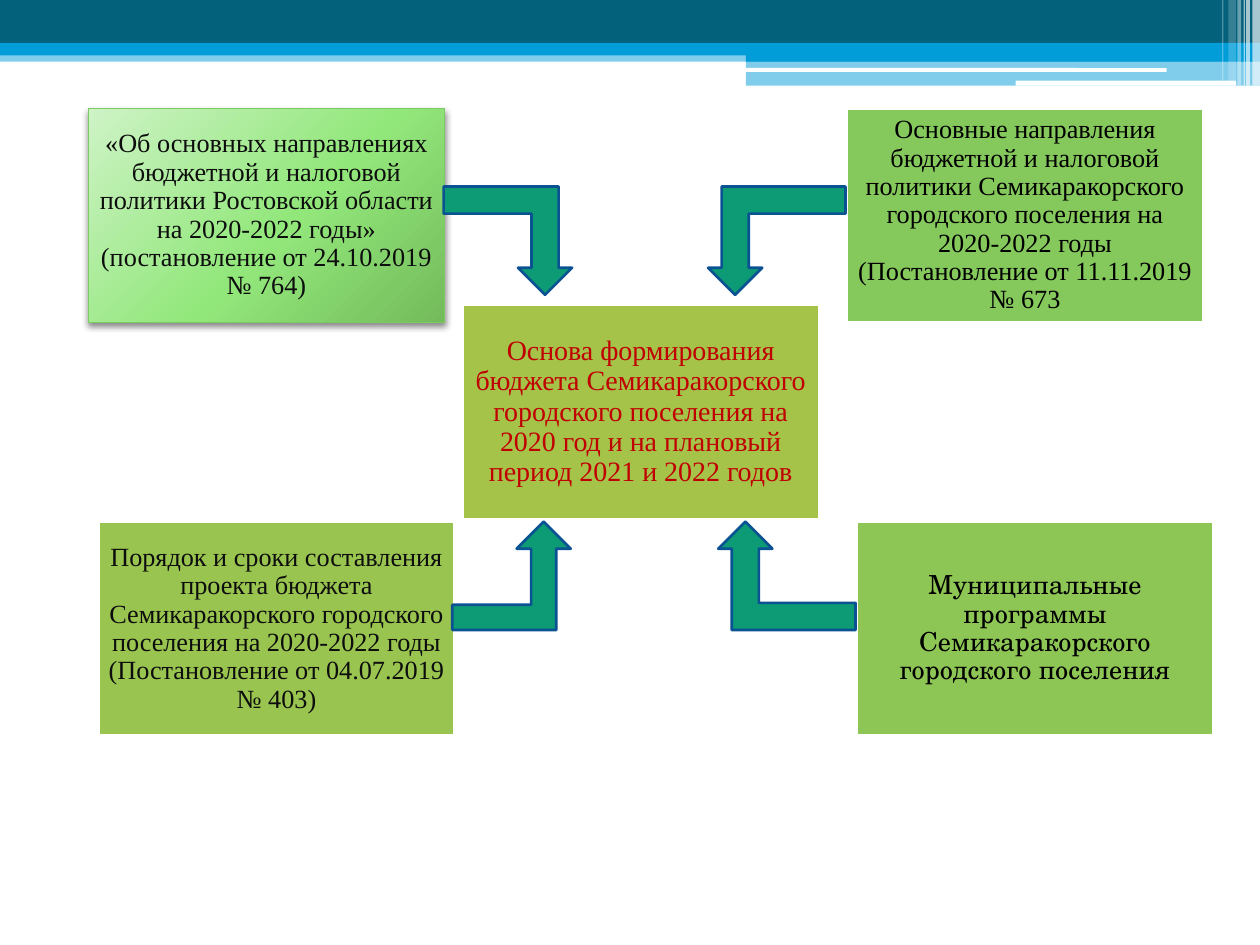
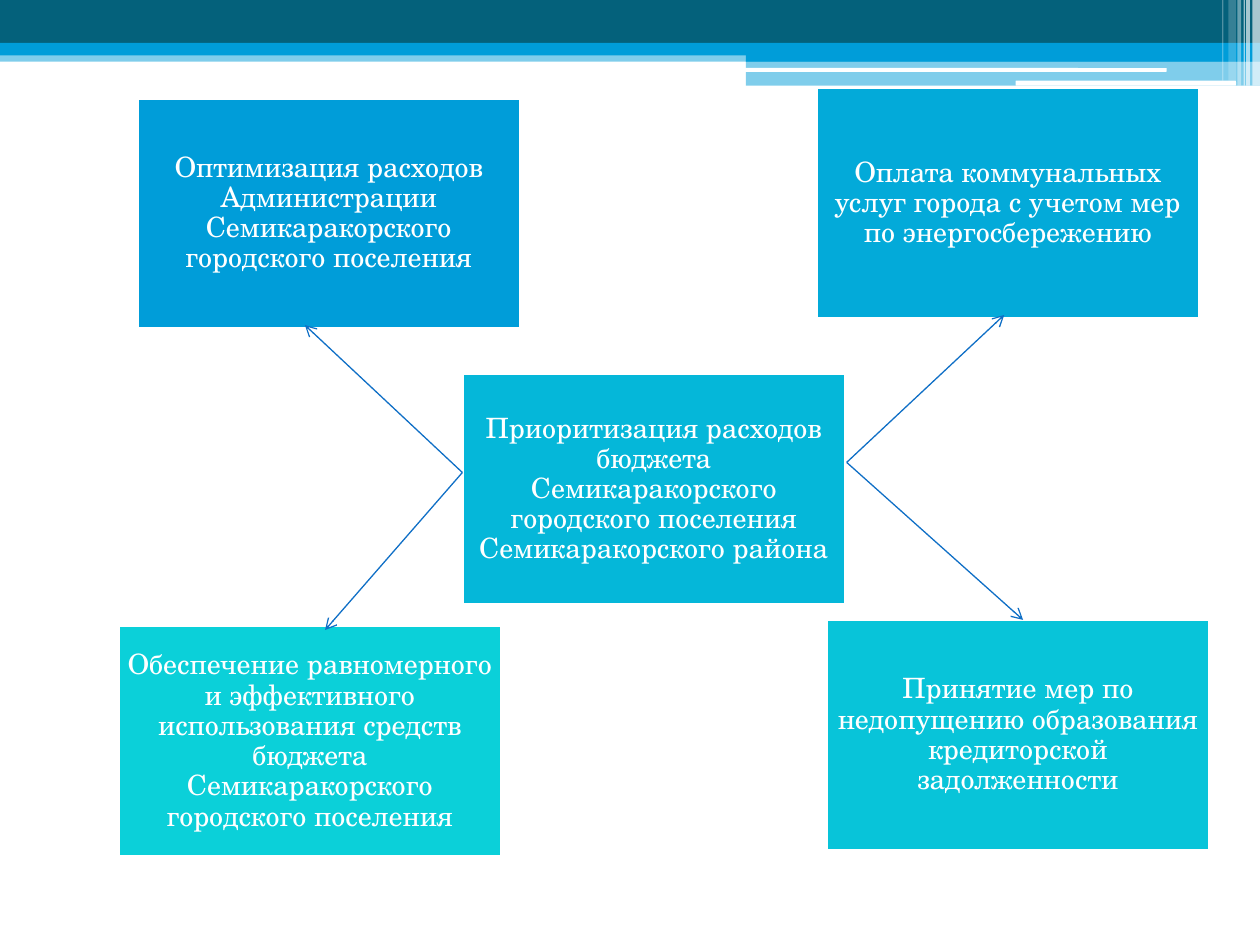
from lxml import etree
from pptx import Presentation
from pptx.dml.color import RGBColor
from pptx.enum import shapes, text
from pptx.oxml import parse_xml
from pptx.oxml.ns import nsdecls, qn
from pptx.util import Inches, Pt

SERIF, SCHOOL = "Times New Roman", "TeX Gyre Schola"
WHITE, BLUE, NAVY = "FFFFFF", "009DD9", "04617B"
RECT, ROUND = shapes.MSO_SHAPE.RECTANGLE, shapes.MSO_SHAPE.ROUNDED_RECTANGLE

# Header bands: preset, left, top, width, height, colour, opacity in percent
BANDS = [
    (RECT, 0, 0.4, 10, 0.09, BLUE, 50),
    (RECT, 0, 0, 10, 0.34, NAVY, 100),
    (RECT, 0, 0.34, 10, 0.1, BLUE, 100),
    (RECT, 5.92, 0.39, 4.08, 0.1, BLUE, 100),
    (RECT, 5.92, 0.48, 4.08, 0.2, BLUE, 50),
    (ROUND, 5.91, 0.54, 3.35, 0.03, WHITE, 100),
    (ROUND, 8.06, 0.64, 1.75, 0.04, WHITE, 100),
]
# White stripes in the right corner: left, width, height, opacity
STRIPES = [
    (9.94, 0.06, 0.68, 65), (9.89, 0.03, 0.68, 65), (9.87, 0.01, 0.68, 60),
    (9.82, 0.03, 0.68, 40), (9.75, 0.06, 0.64, 20), (9.7, 0.01, 0.64, 30),
]

# Boxes: left, top, fill, font, size, text colour, wording
BASIS_SIZE, BASIS_INSET = (2.83, 1.7), 0.06
BASIS = [
    (0.7, 0.86, "92E77B", SERIF, 15, "0D0D0D",
     "«Об основных направлениях бюджетной и налоговой политики Ростовской "
     "области на 2020-2022 годы» (постановление от 24.10.2019 № 764)"),
    (6.72, 0.86, "85C85C", SERIF, 15, "000000",
     "Основные направления бюджетной и налоговой политики Семикаракорского "
     "городского поселения на 2020-2022 годы (Постановление от 11.11.2019 № 673"),
    (6.8, 4.14, "8EC656", SCHOOL, 15, "000000",
     "Муниципальные программы Семикаракорского городского поселения"),
    (0.78, 4.14, "99C44F", SERIF, 15, "0D0D0D",
     "Порядок и сроки составления проекта бюджета Семикаракорского городского "
     "поселения на 2020-2022 годы (Постановление от 04.07.2019 № 403)"),
    (3.67, 2.42, "A5C249", SERIF, 16, "C00000",
     "Основа формирования бюджета Семикаракорского городского поселения "
     "на 2020 год и на плановый период 2021 и 2022 годов"),
]
# Bent arrows: left, top, width, rotation, flip attribute, shaft thickness
BENT_ARROWS = [
    (3.59, 4.14, 0.94, 0, None, 0.232),
    (5.7, 4.14, 1.09, 180, "flipV", 0.25),
    (3.52, 1.48, 1.02, 180, "flipH", 0.25),
    (5.62, 1.48, 1.09, 180, None, 0.25),
]

PRIORITY_SIZE, PRIORITY_INSET = (3.04, 1.83), 0.07
PRIORITIES = [
    (1.09, 0.78, BLUE, "Оптимизация расходов Администрации Семикаракорского "
     "городского поселения"),
    (6.48, 0.7, "03AAD9", "Оплата коммунальных услуг города с учетом мер "
     "по энергосбережению"),
    (3.67, 2.97, "05B7D9", "Приоритизация расходов бюджета Семикаракорского "
     "городского поселения Семикаракорского района"),
    (6.56, 4.92, "08C4D9", "Принятие мер по недопущению образования "
     "кредиторской задолженности"),
    (0.94, 4.97, "0BD0D9", "Обеспечение равномерного и эффективного использования "
     "средств бюджета Семикаракорского городского поселения"),
]
# Arrow start and the ends it fans out to
RAYS = [
    ((3.67, 3.75), [(2.58, 5), (2.42, 2.58)]),
    ((6.72, 3.67), [(7.97, 2.5), (8.12, 4.92)]),
]

GRADIENT = f"""<a:gradFill {nsdecls('a')} rotWithShape="1"><a:gsLst>
<a:gs pos="0"><a:srgbClr val="CEF3C6"/></a:gs>
<a:gs pos="55000"><a:srgbClr val="92E77B"/></a:gs>
<a:gs pos="100000"><a:srgbClr val="74BC5B"/></a:gs></a:gsLst>
<a:path path="circle"><a:fillToRect l="-40000" t="-90000" r="140000" b="190000"/></a:path>
</a:gradFill>"""
SHADOW = f"""<a:effectLst {nsdecls('a')}>
<a:outerShdw blurRad="50800" dist="25400" dir="5400000" rotWithShape="0">
<a:srgbClr val="000000"><a:alpha val="45000"/></a:srgbClr></a:outerShdw></a:effectLst>"""


def rgb(code):
    return RGBColor.from_string(code)


def add_shape(slide, preset, left, top, width, height, fill, line=None, opacity=100):
    sp = slide.shapes.add_shape(preset, *map(Inches, (left, top, width, height)))
    sp.shadow.inherit = False
    sp.fill.solid()
    sp.fill.fore_color.rgb = rgb(fill)
    if opacity < 100:
        color = sp.fill._xPr.find(f"{qn('a:solidFill')}/{qn('a:srgbClr')}")
        etree.SubElement(color, qn("a:alpha"), val=str(opacity * 1000))
    if line:
        sp.line.color.rgb = rgb(line)
        sp.line.width = Pt(1.5)
    else:
        sp.line.fill.background()
    return sp


def add_box(slide, left, top, size, fill, inset, font, points, color, wording):
    sp = add_shape(slide, RECT, left, top, *size, fill, WHITE)
    tf = sp.text_frame
    tf.text = wording
    tf.word_wrap = True
    tf.vertical_anchor = text.MSO_ANCHOR.MIDDLE
    tf.margin_left = tf.margin_right = tf.margin_top = tf.margin_bottom = Inches(inset)
    p = tf.paragraphs[0]
    p.alignment = text.PP_ALIGN.CENTER
    p.line_spacing = 0.9
    r = p.runs[0]
    r.font.name, r.font.size, r.font.color.rgb = font, Pt(points), rgb(color)
    return sp


def highlight(sp):
    """Give a box the glossy green gradient, a green edge and a soft shadow."""
    props = sp._element.spPr
    props.replace(props.find(qn("a:solidFill")), parse_xml(GRADIENT))
    props.replace(props.find(qn("a:effectLst")), parse_xml(SHADOW))
    sp.line.color.rgb = rgb("7CCA62")
    sp.line.width = Pt(0.75)


def add_bent_arrow(slide, left, top, width, rotation, flip, shaft):
    sp = add_shape(slide, shapes.MSO_SHAPE.BENT_UP_ARROW, left, top, width, 0.86,
                   "0C9B74", "0B5292")
    sp.adjustments[0] = shaft
    sp.rotation = rotation
    if flip:
        sp._element.spPr.find(qn("a:xfrm")).set(flip, "1")


def add_ray(slide, start, end):
    line = slide.shapes.add_connector(shapes.MSO_CONNECTOR.STRAIGHT,
                                      *map(Inches, start + end))
    line.line.color.rgb = rgb("0F6FC6")
    line.line.width = Pt(0.75)
    etree.SubElement(line.line._get_or_add_ln(), qn("a:tailEnd"), type="arrow")
    etree.SubElement(line._element.spPr, qn("a:effectLst"))


def new_slide(prs):
    slide = prs.slides.add_slide(prs.slide_layouts[6])
    for *place, color, opacity in BANDS:
        add_shape(slide, *place, color, opacity=opacity)
    for left, width, height, opacity in STRIPES:
        add_shape(slide, RECT, left, 0, width, height, WHITE, opacity=opacity)
    return slide


def main():
    prs = Presentation()
    prs.slide_width, prs.slide_height = Inches(10), Inches(7.5)

    # Basis of the budget
    slide = new_slide(prs)
    boxes = [add_box(slide, left, top, BASIS_SIZE, fill, BASIS_INSET, *style)
             for left, top, fill, *style in BASIS]
    highlight(boxes[0])
    for arrow in BENT_ARROWS:
        add_bent_arrow(slide, *arrow)

    # Spending priorities
    slide = new_slide(prs)
    for left, top, fill, wording in PRIORITIES:
        add_box(slide, left, top, PRIORITY_SIZE, fill, PRIORITY_INSET,
                SCHOOL, 16, WHITE, wording)
    for start, ends in RAYS:
        for end in ends:
            add_ray(slide, start, end)

    prs.save("out.pptx")


if __name__ == "__main__":
    main()
